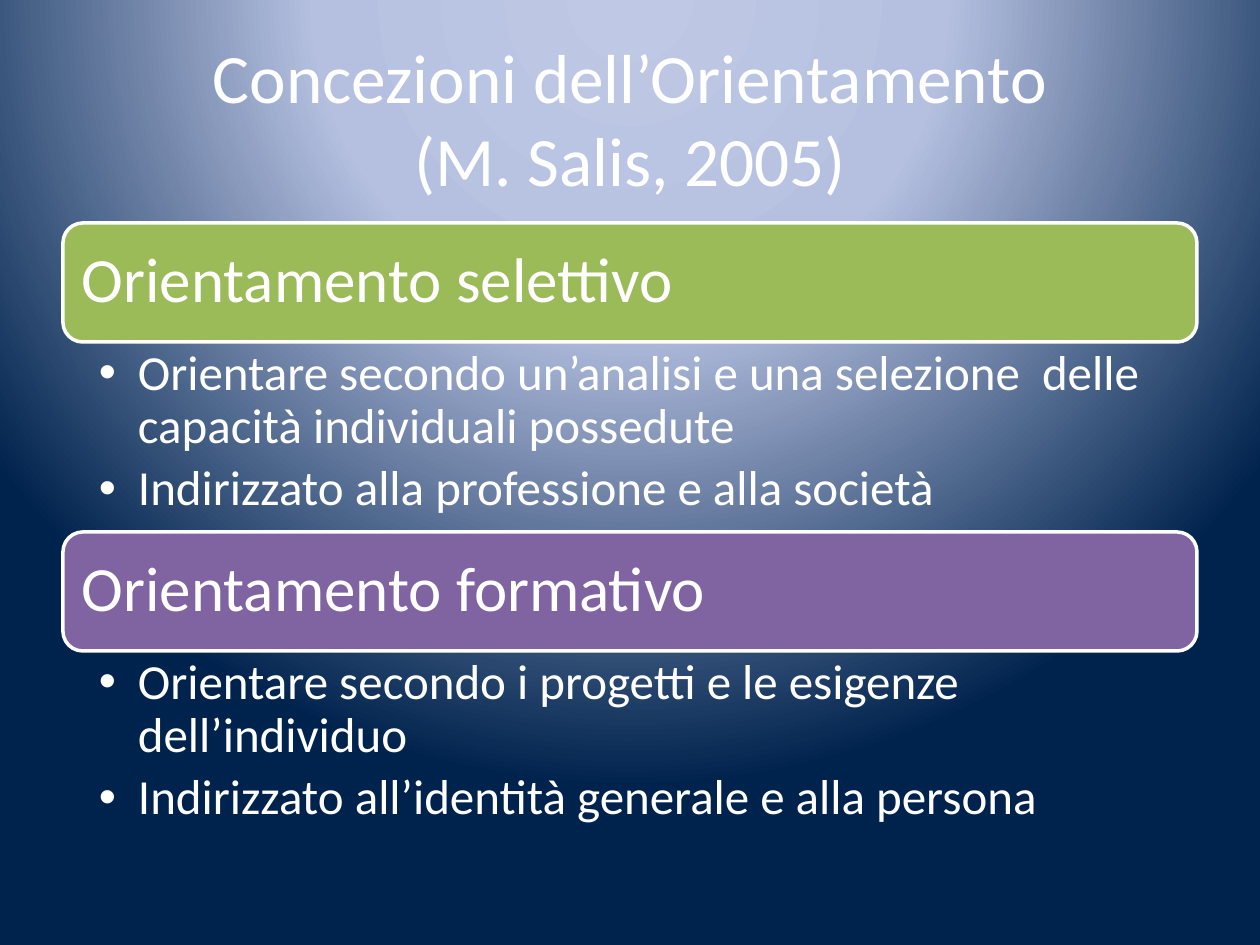
from dataclasses import dataclass

from lxml.etree import SubElement
from pptx import Presentation
from pptx.dml.color import RGBColor
from pptx.enum.shapes import MSO_SHAPE
from pptx.enum.text import MSO_ANCHOR, PP_ALIGN
from pptx.oxml import parse_xml
from pptx.oxml.ns import nsdecls, qn
from pptx.util import Emu, Pt


@dataclass(frozen=True)
class Theme:
    """Colours and type sizes of the slide."""
    font: str = "Calibri"
    text: str = "FFFFFF"
    green: str = "9BBB59"
    purple: str = "8064A2"
    glow: tuple = ((0, "BFC9E5"), (40, "B5C0E0"), (100, "00234D"))
    title_size: float = 39.6
    heading_size: float = 36
    bullet_size: float = 28


THEME = Theme()
SCALE = 914400 / 126
TITLE = "Concezioni dell’Orientamento\v(M. Salis, 2005)"
SECTIONS = (
    ("Orientamento selettivo", THEME.green, (
        "Orientare secondo un’analisi e una selezione  delle capacità individuali possedute",
        "Indirizzato alla professione e alla società",
    )),
    ("Orientamento formativo", THEME.purple, (
        "Orientare secondo i progetti e le esigenze dell’individuo",
        "Indirizzato all’identità generale e alla persona",
    )),
)


def px(length):
    """Turn a length in px into EMU."""
    return Emu(round(length * SCALE))


def set_values(target, values):
    """Set each named attribute of an object."""
    for name, value in values.items():
        setattr(target, name, value)


def write(shape, lines, size, insets, frame_format, para_format):
    """Write one paragraph a line into a shape and return the paragraphs."""
    frame = shape.text_frame
    sides = ("margin_left", "margin_top", "margin_right", "margin_bottom")
    set_values(frame, {"word_wrap": True, **frame_format})
    set_values(frame, dict(zip(sides, map(px, insets))))
    frame.text = "\n".join(lines)
    for para in frame.paragraphs:
        set_values(para, para_format)
        for span in para.runs:
            set_values(span.font, {"name": THEME.font, "size": Pt(size)})
            span.font.color.rgb = RGBColor.from_string(THEME.text)
    return frame.paragraphs


def add_bullet(para, indent):
    """Give a paragraph a round bullet and a hanging indent."""
    properties = para._p.get_or_add_pPr()
    properties.set("marL", str(px(indent)))
    properties.set("indent", str(px(-indent)))
    SubElement(properties, qn("a:buFont")).set("typeface", "Arial")
    SubElement(properties, qn("a:buChar")).set("char", "•")


def paint_background(page):
    """Fill the page with a circular glow centred above its top edge."""
    stops = "".join(
        f'<a:gs pos="{place * 1000}"><a:srgbClr val="{colour}"/></a:gs>'
        for place, colour in THEME.glow
    )
    background = parse_xml(
        f'<p:bg {nsdecls("p", "a")}><p:bgPr><a:gradFill rotWithShape="1">'
        f'<a:gsLst>{stops}</a:gsLst><a:path path="circle">'
        '<a:fillToRect l="50000" t="-80000" r="50000" b="180000"/></a:path>'
        "</a:gradFill><a:effectLst/></p:bgPr></p:bg>"
    )
    page.shapes._spTree.addprevious(background)


def add_title(page, left, top, width, height):
    """Place the centred title in its box."""
    box = page.shapes.add_textbox(*map(px, (left, top, width, height)))
    write(box, [TITLE], THEME.title_size, (13, 6, 13, 6),
          {"vertical_anchor": MSO_ANCHOR.MIDDLE}, {"alignment": PP_ALIGN.CENTER})


def add_section(page, left, top, width, height, section):
    """Place a coloured heading bar with its bullets below."""
    heading, colour, bullets = section
    bar_height = 119
    bar = page.shapes.add_shape(
        MSO_SHAPE.ROUNDED_RECTANGLE, *map(px, (left, top, width, bar_height)))
    bar.shadow.inherit = False
    bar.fill.solid()
    bar.fill.fore_color.rgb = RGBColor.from_string(colour)
    bar.line.color.rgb = RGBColor.from_string(THEME.text)
    bar.line.width = Pt(2)
    write(bar, [heading], THEME.heading_size, (13, 13, 13, 13),
          {"vertical_anchor": MSO_ANCHOR.MIDDLE},
          {"alignment": PP_ALIGN.LEFT, "line_spacing": 0.9})

    box = page.shapes.add_textbox(
        *map(px, (left, top + bar_height, width, height - bar_height)))
    paragraphs = write(box, bullets, THEME.bullet_size, (36, 6, 35, 6),
                       {"vertical_anchor": MSO_ANCHOR.TOP},
                       {"line_spacing": 0.9, "space_after": Pt(5.6)})
    for para in paragraphs:
        add_bullet(para, 39)


def main():
    """Build the slide and save the deck."""
    deck = Presentation()
    set_values(deck, {"slide_width": px(1260), "slide_height": px(945)})
    page = deck.slides.add_slide(deck.slide_layouts[6])
    paint_background(page)
    left, width, section_height = 63, 1134, 309
    add_title(page, left, 38, width, 158)
    for index, section in enumerate(SECTIONS):
        add_section(page, left, 223 + index * section_height, width,
                    section_height, section)
    deck.save("out.pptx")


if __name__ == "__main__":
    main()
